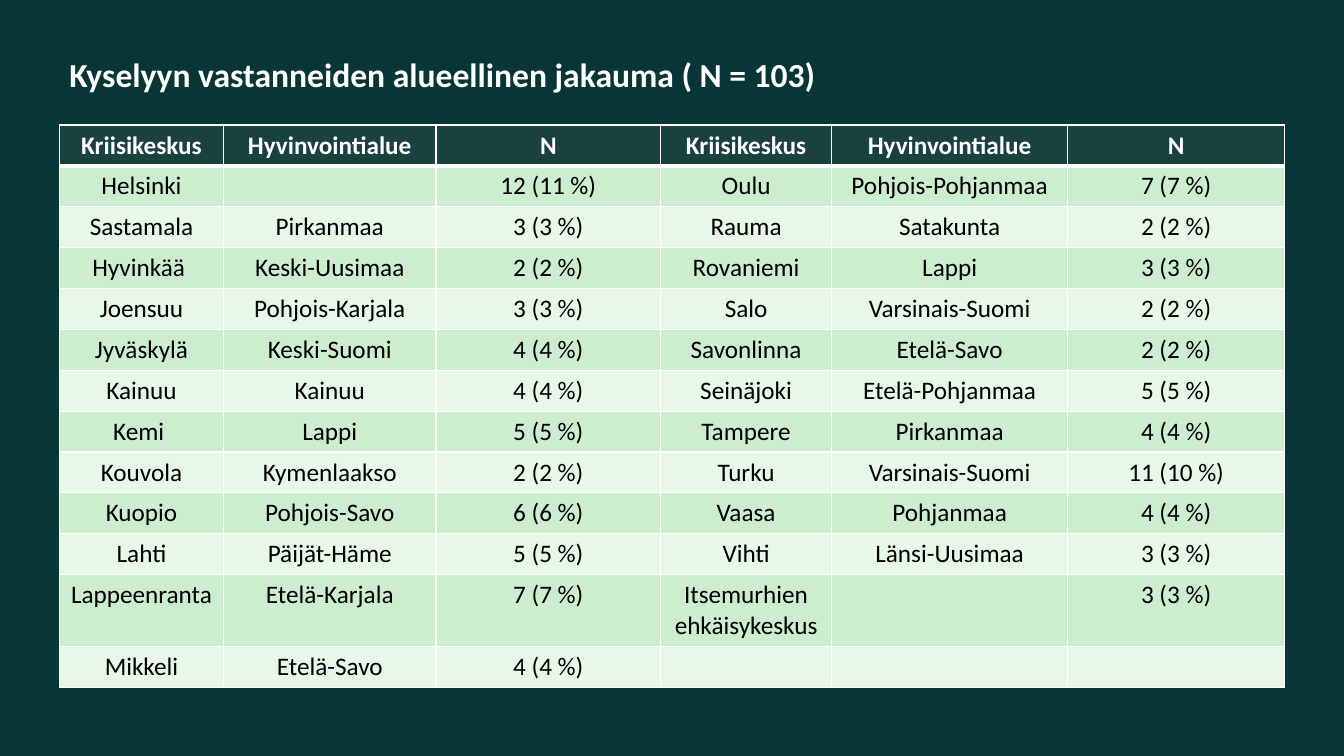
from dataclasses import dataclass

from lxml import etree
from pptx import Presentation
from pptx.dml.color import RGBColor
from pptx.enum import text
from pptx.oxml import ns
from pptx.util import Pt


@dataclass
class Theme:
    back: str = "083535"
    head: str = "19413D"
    odd: str = "CCEECE"
    even: str = "E7F7E8"
    light: str = "FFFFFF"
    dark: str = "000000"
    face: str = "Calibri"
    title: int = 24
    body: int = 18
    thin: int = 1
    thick: int = 3


class Deck:
    def __init__(self, theme, width, height):
        self.theme = theme
        self.show = Presentation()
        self.show.slide_width = Pt(width)
        self.show.slide_height = Pt(height)
        self.slide = self.show.slides.add_slide(self.show.slide_layouts[6])
        fill = self.slide.background.fill
        fill.solid()
        fill.fore_color.rgb = RGBColor.from_string(theme.back)

    def style(self, para, size, color, bold):
        for run in para.runs:
            run.font.name = self.theme.face
            run.font.size = Pt(size)
            run.font.bold = bold
            run.font.color.rgb = RGBColor.from_string(color)

    def title(self, words, left, top, width, height):
        box = self.slide.shapes.add_textbox(Pt(left), Pt(top), Pt(width), Pt(height))
        frame = box.text_frame
        frame.word_wrap = True
        frame.vertical_anchor = text.MSO_ANCHOR.TOP
        frame.text = words
        para = frame.paragraphs[0]
        para.line_spacing = Pt(36)
        self.style(para, self.theme.title, self.theme.light, True)

    def border(self, cell, widths):
        props = cell._tc.get_or_add_tcPr()
        for side, width in widths.items():
            line = etree.SubElement(props, ns.qn(f"a:ln{side}"), w=str(Pt(width)))
            fill = etree.SubElement(line, ns.qn("a:solidFill"))
            etree.SubElement(fill, ns.qn("a:srgbClr"), val=self.theme.light)

    def cell(self, cell, words, row):
        theme = self.theme
        head = row == 0
        self.border(cell, {
            "L": theme.thin,
            "R": theme.thin,
            "T": theme.thick if row == 1 else theme.thin,
            "B": theme.thick if head else theme.thin,
        })
        shade = theme.head if head else (theme.even, theme.odd)[row % 2]
        cell.fill.solid()
        cell.fill.fore_color.rgb = RGBColor.from_string(shade)
        cell.text_frame.text = words
        para = cell.text_frame.paragraphs[0]
        para.alignment = text.PP_ALIGN.CENTER
        self.style(para, theme.body, theme.light if head else theme.dark, head)

    def table(self, rows, left, top, widths, heights):
        grid = self.slide.shapes.add_table(
            len(rows), len(widths), Pt(left), Pt(top), Pt(sum(widths)), Pt(sum(heights))
        ).table
        for col, width in zip(grid.columns, widths):
            col.width = Pt(width)
        for index, (words, height) in enumerate(zip(rows, heights)):
            grid.rows[index].height = Pt(height)
            for col, word in enumerate(words):
                self.cell(grid.cell(index, col), word, index)


HEAD = ("Kriisikeskus", "Hyvinvointialue", "N")
ROWS = [
    HEAD + HEAD,
    ("Helsinki", "", "12 (11 %)", "Oulu", "Pohjois-Pohjanmaa", "7 (7 %)"),
    ("Sastamala", "Pirkanmaa", "3 (3 %)", "Rauma", "Satakunta", "2 (2 %)"),
    ("Hyvinkää ", "Keski-Uusimaa", "2 (2 %)", "Rovaniemi", "Lappi", "3 (3 %)"),
    ("Joensuu", "Pohjois-Karjala", "3 (3 %)", "Salo", "Varsinais-Suomi", "2 (2 %)"),
    ("Jyväskylä", "Keski-Suomi", "4 (4 %)", "Savonlinna", "Etelä-Savo", "2 (2 %)"),
    ("Kainuu", "Kainuu", "4 (4 %)", "Seinäjoki", "Etelä-Pohjanmaa", "5 (5 %)"),
    ("Kemi ", "Lappi", "5 (5 %)", "Tampere", "Pirkanmaa", "4 (4 %)"),
    ("Kouvola", "Kymenlaakso", "2 (2 %)", "Turku", "Varsinais-Suomi", "11 (10 %)"),
    ("Kuopio", "Pohjois-Savo", "6 (6 %)", "Vaasa", "Pohjanmaa", "4 (4 %)"),
    ("Lahti", "Päijät-Häme", "5 (5 %)", "Vihti", "Länsi-Uusimaa", "3 (3 %)"),
    ("Lappeenranta", "Etelä-Karjala", "7 (7 %)", "Itsemurhien ehkäisykeskus", "", "3 (3 %)"),
    ("Mikkeli", "Etelä-Savo", "4 (4 %)", "", "", ""),
]


def main():
    deck = Deck(Theme(), 960, 540)
    widths = [117.2, 151.8, 160.4, 122.2, 168.6, 155]
    heights = [29.2] * 11 + [50.8, 29.2]
    deck.table(ROWS, 42.5, 89.3, widths, heights)
    deck.title("Kyselyyn vastanneiden alueellinen jakauma ( N = 103)", 42.5, 27.4, 851, 78.5)
    deck.show.save("out.pptx")


if __name__ == "__main__":
    main()
